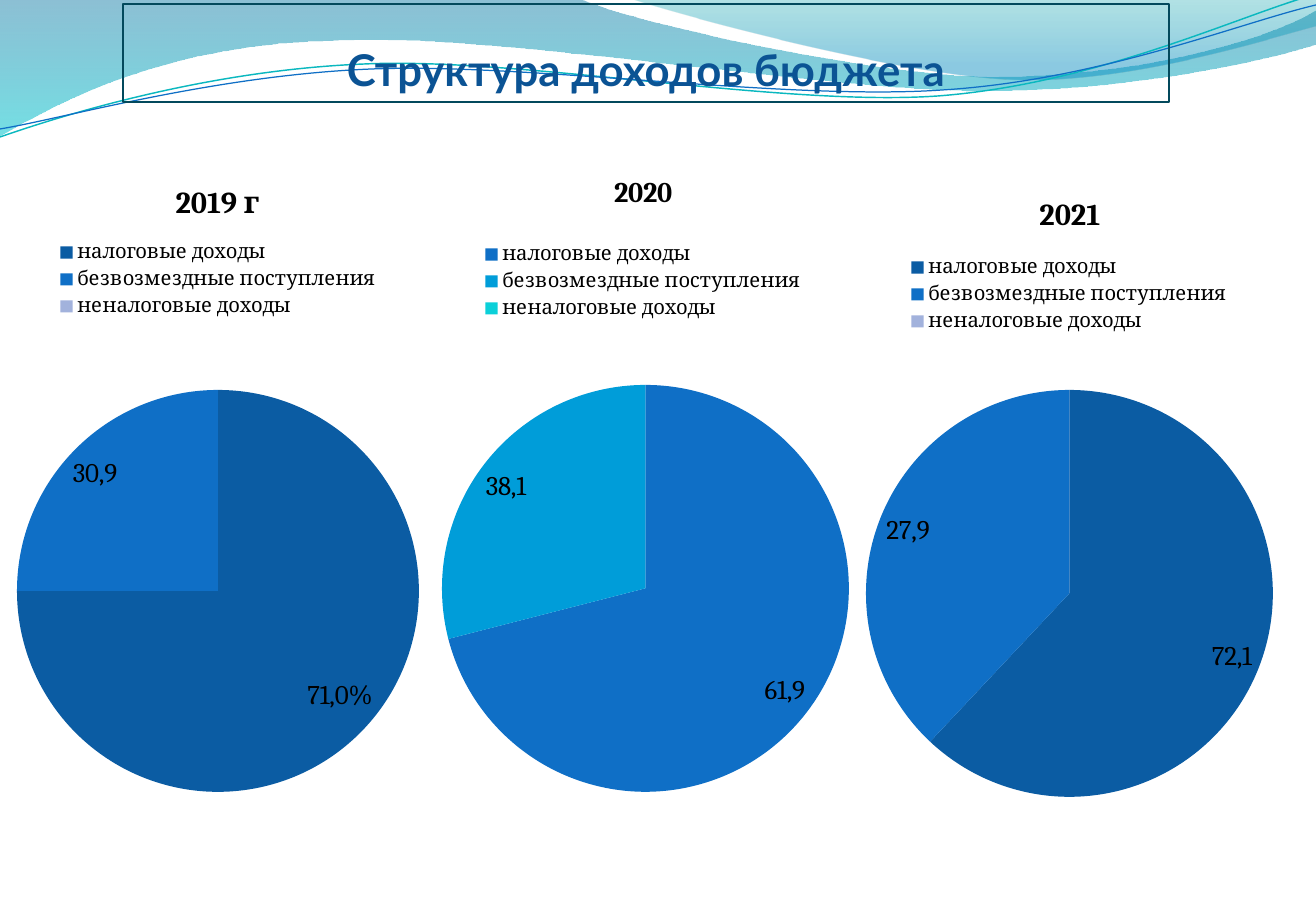
from math import cos, pi, sin

from lxml.etree import SubElement
from pptx import Presentation
from pptx.chart.data import CategoryChartData
from pptx.dml.color import RGBColor
from pptx.enum.chart import XL_CHART_TYPE, XL_LABEL_POSITION, XL_LEGEND_POSITION
from pptx.enum.text import MSO_ANCHOR, MSO_AUTO_SIZE, PP_ALIGN
from pptx.oxml.ns import qn
from pptx.util import Pt

PX = 7526
SLIDE_SIZE = (1316, 911)

BLACK = RGBColor(0x00, 0x00, 0x00)
HEADING = RGBColor(0x0B, 0x53, 0x94)
FRAME = RGBColor(0x03, 0x49, 0x5C)
NAVY = RGBColor(0x0B, 0x5C, 0xA3)
BLUE = RGBColor(0x0F, 0x6F, 0xC6)
SKY = RGBColor(0x00, 0x9D, 0xD9)
CYAN = RGBColor(0x0B, 0xD0, 0xD9)
LAVENDER = RGBColor(0xA2, 0xB2, 0xDC)
TEAL = RGBColor(0x0A, 0xB8, 0xBF)
DEEP_TEAL = RGBColor(0x00, 0x74, 0xA1)
AQUA = RGBColor(0x00, 0xC6, 0xCF)
GREEN_TEAL = RGBColor(0x00, 0xA1, 0xA9)
OCEAN = RGBColor(0x00, 0x8B, 0xBF)

HEADING_TEXT = "Структура доходов бюджета"
HEADING_BOX = (123, 4, 1046, 98)
INCOME_KINDS = ["налоговые доходы", "безвозмездные поступления", "неналоговые доходы"]
LEGEND_SIZE = (322, 85)

YEARS = [
    dict(title="2020", title_size=16.8, title_at=(609, 169), box=(425, 159, 440, 693),
         legend_at=(482, 239), pie=(442, 385, 407), shares=(71, 29, 0), colors=(BLUE, SKY, CYAN),
         labels=(("61,9", 785, 691), ("38,1", 506, 487))),
    dict(title="2019 г", title_size=18, title_at=(170, 176), box=(0, 159, 435, 699),
         legend_at=(57, 237), pie=(17, 390, 402), shares=(75, 25, 0), colors=(NAVY, BLUE, LAVENDER),
         labels=(("71,0%", 340, 696), ("30,9", 95, 474))),
    dict(title="2021", title_size=18, title_at=(1034, 188), box=(849, 169, 440, 679),
         legend_at=(908, 252), pie=(866, 390, 407), shares=(62, 38, 0), colors=(NAVY, BLUE, LAVENDER),
         labels=(("72,1", 1232, 657), ("27,9", 908, 531))),
]

BANDS = [
    ((0, -1),
     [[(580, -1)], [(626, 21), (874, 77), (999, 77)], [(1123, 77), (1261, 45), (1316, 11)],
      [(1318, 44)], [(1294, 53), (1145, 92), (982, 91)], [(819, 91), (503, 34), (339, 41)],
      [(170, 43), (61, 101), (-1, 137)]],
     [(0, DEEP_TEAL, 45), (1, AQUA, 55)]),
    ((631, -1),
     [[(671, 13), (898, 75), (1012, 79)], [(1126, 84), (1266, 39), (1316, 26)], [(1316, 0)]],
     [(0, GREEN_TEAL, 30), (0.8, OCEAN, 45)]),
]
RIPPLES = [
    ((0, 137),
     [[(63, 115), (208, 70), (365, 64)], [(520, 57), (780, 107), (938, 96)],
      [(1096, 84), (1236, 17), (1313, -5)]],
     TEAL, 0.85),
    ((0, 129),
     [[(62, 119), (215, 75), (373, 69)], [(530, 63), (786, 101), (943, 90)],
      [(1101, 80), (1239, 23), (1316, 5)]],
     BLUE, 0.75),
]


def write(frame, text, font="Cambria", size=16, color=BLACK, bold=False, spacing=None):
    frame.text = text
    paragraph = frame.paragraphs[0]
    paragraph.alignment = PP_ALIGN.CENTER
    if spacing:
        paragraph.line_spacing = spacing
    style = paragraph.runs[0].font
    style.name, style.size, style.bold = font, Pt(size), bold
    style.color.rgb = color


def draw_outline(start, segments, close):
    builder = slide.shapes.build_freeform(*start, scale=PX)
    builder.add_line_segments([segment[-1] for segment in segments], close=close)
    outline = builder.convert_to_shape()
    outline.shadow.inherit = False
    left, top = round(outline.left / PX), round(outline.top / PX)
    for side, segment in zip(list(outline.element.iter(qn("a:lnTo"))), segments):
        if len(segment) == 3:
            curve = SubElement(side.getparent(), qn("a:cubicBezTo"))
            for x, y in segment:
                SubElement(curve, qn("a:pt"), x=str(x - left), y=str(y - top))
            side.getparent().replace(side, curve)
    return outline


def draw_band(start, segments, stops):
    band = draw_outline(start, segments, True)
    band.line.fill.background()
    band.fill.gradient()
    band.fill.gradient_angle = 270
    for stop, (position, color, _) in zip(band.fill.gradient_stops, stops):
        stop.position = position
        stop.color.rgb = color
    for tint, (_, _, opacity) in zip(band.element.iter(qn("a:srgbClr")), stops):
        SubElement(tint, qn("a:alpha"), val=str(opacity * 1000))


def draw_ripple(start, segments, color, width):
    ripple = draw_outline(start, segments, False)
    ripple.fill.background()
    ripple.line.color.rgb = color
    ripple.line.width = Pt(width)


def set_layout(part, index, **values):
    for old in part.findall(qn("c:layout")):
        part.remove(old)
    layout = SubElement(part, qn("c:layout"))
    manual = SubElement(layout, qn("c:manualLayout"))
    for tag, value in values.items():
        SubElement(manual, qn(f"c:{tag}"), val=str(value))
    part.insert(index, layout)


def draw_year(year):
    left, top, width, height = year["box"]
    data = CategoryChartData()
    data.categories = INCOME_KINDS
    data.add_series("Series 1", year["shares"])
    chart = slide.shapes.add_chart(
        XL_CHART_TYPE.PIE, *(side * PX for side in year["box"]), data).chart
    chart.font.name, chart.font.size = "Cambria", Pt(12)
    chart.font.color.rgb = BLACK

    def part(tag):
        return chart.element.find(".//" + qn(tag))

    def edges(x, y):
        return dict(xMode="edge", yMode="edge", x=(x - left) / width, y=(y - top) / height)

    chart.has_title = True
    write(chart.chart_title.text_frame, year["title"], size=year["title_size"], bold=True)
    set_layout(part("c:title"), 1, **edges(*year["title_at"]))

    chart.has_legend = True
    chart.legend.position = XL_LEGEND_POSITION.TOP
    chart.legend.include_in_layout = False
    chart.legend.font.name, chart.legend.font.size = "Cambria", Pt(12)
    set_layout(part("c:legend"), 1, **edges(*year["legend_at"]),
               w=LEGEND_SIZE[0] / width, h=LEGEND_SIZE[1] / height)

    pie_left, pie_top, diameter = year["pie"]
    set_layout(part("c:plotArea"), 0, layoutTarget="inner",
               **edges(pie_left, pie_top), w=diameter / width, h=diameter / height)

    chart.plots[0].vary_by_categories = True
    series = chart.plots[0].series[0]
    for index, color in enumerate(year["colors"]):
        slice_fill = series.points[index].format.fill
        slice_fill.solid()
        slice_fill.fore_color.rgb = color

    series.data_labels.show_value = False
    for leader in chart.element.iter(qn("c:showLeaderLines")):
        leader.set("val", "0")
    radius = diameter / 2
    for index, (text, x, y) in enumerate(year["labels"]):
        label = series.points[index].data_label
        write(label.text_frame, text)
        label.position = XL_LABEL_POSITION.CENTER
        share = sum(year["shares"][:index]) + year["shares"][index] / 2
        angle = 2 * pi * share / sum(year["shares"])
        middle_x = pie_left + radius + radius / 2 * sin(angle)
        middle_y = pie_top + radius - radius / 2 * cos(angle)
        set_layout(list(chart.element.iter(qn("c:dLbl")))[index], 1,
                   x=(x - middle_x) / width, y=(y - middle_y) / height)


deck = Presentation()
deck.slide_width, deck.slide_height = (side * PX for side in SLIDE_SIZE)
slide = deck.slides.add_slide(deck.slide_layouts[5])

for band in BANDS:
    draw_band(*band)
for ripple in RIPPLES:
    draw_ripple(*ripple)

heading = slide.shapes.title
heading.element.getparent().append(heading.element)
heading.left, heading.top, heading.width, heading.height = (side * PX for side in HEADING_BOX)
heading.line.color.rgb = FRAME
heading.line.width = Pt(0.75)
heading.text_frame.auto_size = MSO_AUTO_SIZE.NONE
heading.text_frame.vertical_anchor = MSO_ANCHOR.MIDDLE
write(heading.text_frame, HEADING_TEXT, font="Lato", size=25.9, color=HEADING, bold=True, spacing=1.6)

for year in YEARS:
    draw_year(year)

deck.save("out.pptx")
